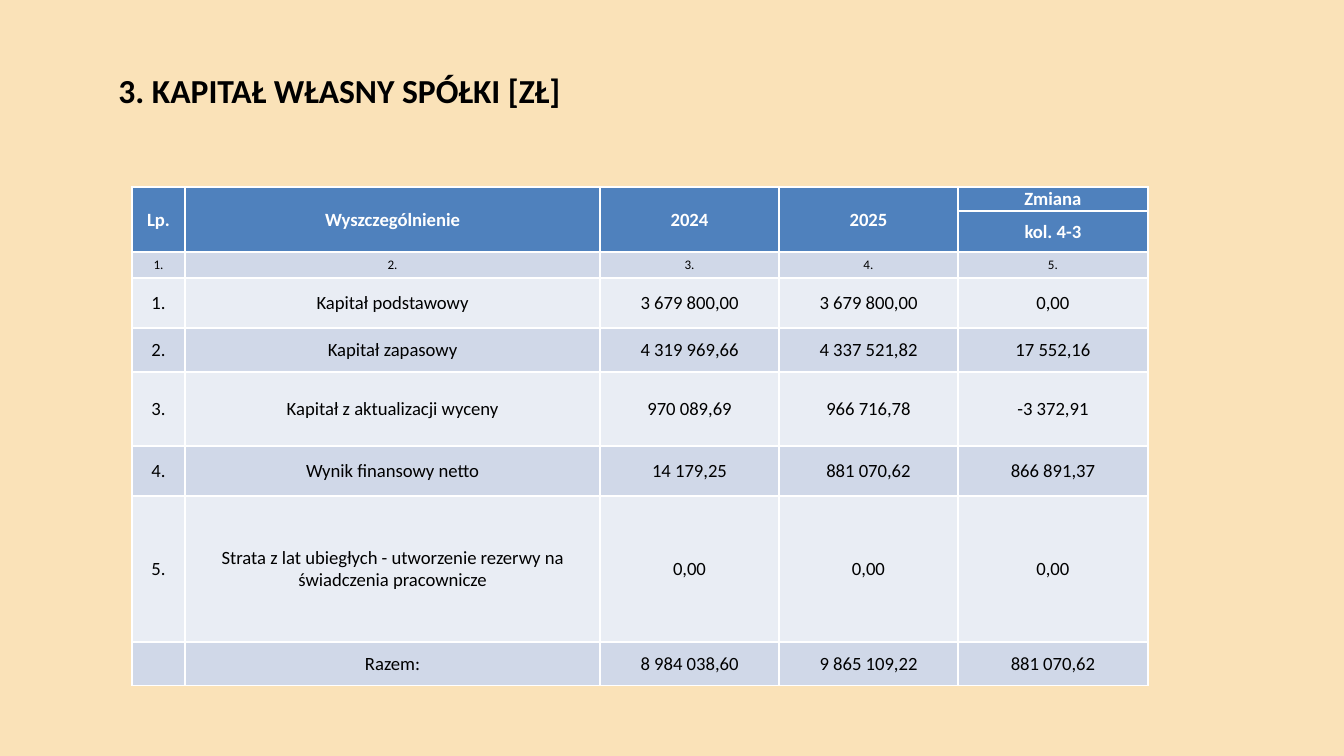
"""Builds the slide with the table of the company's equity."""
import pptx
import pptx.dml.color
import pptx.enum.text
import pptx.oxml
import pptx.oxml.ns
import pptx.util

EMU_PER_PX = 914400 / 134.4
COLORS = {
    "background": "FAE2B8",
    "header": "4F81BD",
    "dark band": "D0D8E8",
    "light band": "E9EDF4",
    "white": "FFFFFF",
    "black": "000000",
}
COLUMN_WIDTHS = [53, 415, 179, 179, 190]
ROW_HEIGHTS = [24, 41, 26, 50, 44, 74, 50, 146, 44]
HEADER_ROWS = 2
ROWS = [
    ["Lp.", "Wyszczególnienie", "2024", "2025", "Zmiana"],
    ["", "", "", "", "kol. 4-3"],
    ["1.", "2.", "3.", "4.", "5."],
    ["1.", "Kapitał podstawowy", "3 679 800,00", "3 679 800,00", "0,00"],
    ["2.", "Kapitał zapasowy", "4 319 969,66", "4 337 521,82", "17 552,16"],
    ["3.", "Kapitał z aktualizacji wyceny", "970 089,69", "966 716,78", "-3 372,91"],
    ["4.", "Wynik finansowy netto", "14 179,25", "881 070,62", "866 891,37"],
    ["5.", "Strata z lat ubiegłych - utworzenie rezerwy na świadczenia pracownicze",
     "0,00", "0,00", "0,00"],
    ["", "Razem:", "8 984 038,60", "9 865 109,22", "881 070,62"],
]


def px(length):
    return pptx.util.Emu(round(length * EMU_PER_PX))


def write(frame, text, size=10, color="black", bold=False, align="CENTER"):
    paragraph = frame.paragraphs[0]
    paragraph.alignment = pptx.enum.text.PP_ALIGN[align]
    if text:
        run = paragraph.add_run()
        run.text = text
        run.font.name = "Calibri"
        run.font.size = pptx.util.Pt(size)
        run.font.bold = bold
        run.font.color.rgb = pptx.dml.color.RGBColor.from_string(COLORS[color])


deck = pptx.Presentation()
deck.slide_width, deck.slide_height = px(1344), px(756)
slide = deck.slides.add_slide(deck.slide_layouts[5])
slide.background.fill.solid()
slide.background.fill.fore_color.rgb = pptx.dml.color.RGBColor.from_string(COLORS["background"])

title = slide.shapes.title
title.left, title.top, title.width, title.height = px(105), px(63), px(1142), px(63)
title.text_frame.vertical_anchor = pptx.enum.text.MSO_ANCHOR.TOP
title.text_frame.word_wrap = True
write(title.text_frame, "3. KAPITAŁ WŁASNY SPÓŁKI [ZŁ]", size=18, bold=True, align="LEFT")

equity = slide.shapes.add_table(
    len(ROWS), len(COLUMN_WIDTHS), px(132), px(187),
    px(sum(COLUMN_WIDTHS)), px(sum(ROW_HEIGHTS))).table
for column, width in zip(equity.columns, COLUMN_WIDTHS):
    column.width = px(width)
for row, height in zip(equity.rows, ROW_HEIGHTS):
    row.height = px(height)
for column_index in range(len(COLUMN_WIDTHS) - 1):
    equity.cell(0, column_index).merge(equity.cell(HEADER_ROWS - 1, column_index))

for row_index, values in enumerate(ROWS):
    in_header = row_index < HEADER_ROWS
    if in_header:
        band = "header"
    else:
        band = "light band" if row_index % 2 else "dark band"
    edges = {"L": 1, "R": 1, "T": 1, "B": 1}
    if row_index == 0:
        del edges["B"]
    elif row_index == HEADER_ROWS - 1:
        del edges["T"]
        edges["B"] = 1.5
    elif row_index == HEADER_ROWS:
        edges["T"] = 1.5

    for column_index, value in enumerate(values):
        cell = equity.cell(row_index, column_index)
        cell.margin_left = cell.margin_right = cell.margin_top = px(1)
        cell.margin_bottom = 0
        cell.vertical_anchor = pptx.enum.text.MSO_ANCHOR.MIDDLE
        cell_edges = dict(edges)
        if cell.is_merge_origin:
            cell_edges["B"] = 1.5
        for side in "LRTB":
            if side in cell_edges:
                cell._tc.get_or_add_tcPr().append(pptx.oxml.parse_xml(
                    f'<a:ln{side} {pptx.oxml.ns.nsdecls("a")} w="{pptx.util.Pt(cell_edges[side])}">'
                    f'<a:solidFill><a:srgbClr val="{COLORS["white"]}"/></a:solidFill></a:ln{side}>'))
        cell.fill.solid()
        cell.fill.fore_color.rgb = pptx.dml.color.RGBColor.from_string(COLORS[band])
        write(cell.text_frame, value, size=7 if row_index == HEADER_ROWS else 10,
              color="white" if in_header else "black", bold=in_header)

deck.save("out.pptx")
